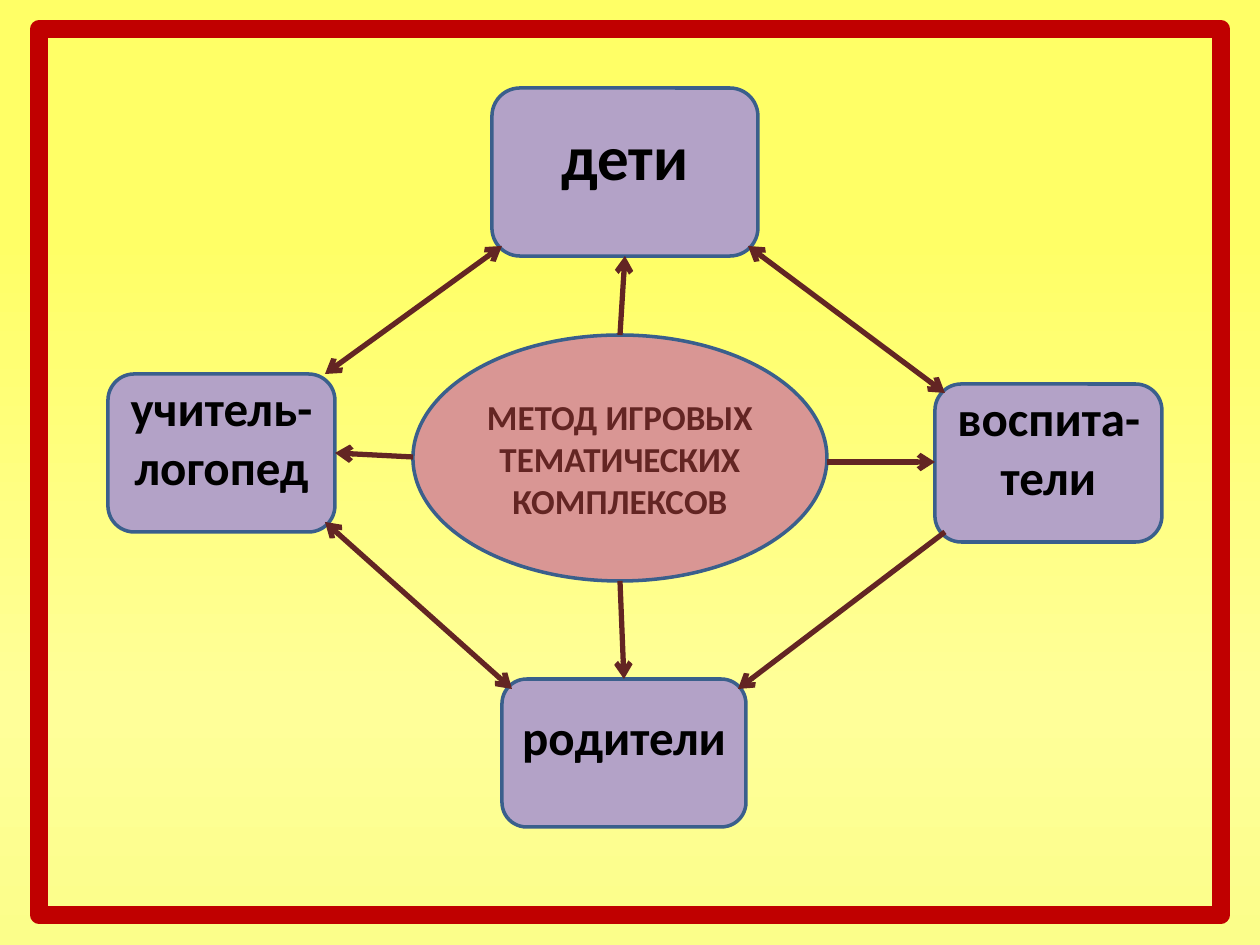
from lxml.etree import SubElement
from pptx import Presentation
from pptx.dml.color import RGBColor
from pptx.enum.shapes import MSO_CONNECTOR, MSO_SHAPE
from pptx.enum.text import MSO_ANCHOR, PP_ALIGN
from pptx.oxml.ns import qn
from pptx.util import Pt

PX = 914400 // 126
FONT = "Calibri"
COLORS = {
    "role": "B3A2C7", "method": "D99694", "outline": "3A5F8C",
    "arrow": "632523", "role_text": "000000", "frame": "C00000",
}
BACKGROUND = [(0, "FFFF66"), (25, "FFFF66"), (75, "FFFF99"), (100, "FBFE8A")]

# text, size, left, top, width, height
ROLES = [
    ("родители", 28, 502, 679, 244, 148),
    ("воспита-тели", 28, 935, 384, 227, 158),
    ("дети", 36, 492, 88, 266, 168),
    ("учитель-логопед", 28, 108, 374, 227, 158),
]
# start x, start y, end x, end y, arrowhead at both ends
ARROWS = [
    (620, 335, 625, 256, False),
    (620, 581, 624, 679, False),
    (413, 457, 335, 453, False),
    (827, 462, 935, 462, False),
    (325, 374, 502, 246, True),
    (748, 246, 945, 393, True),
    (945, 532, 738, 689, False),
    (325, 522, 512, 689, True),
]


def rgb(name):
    return RGBColor.from_string(COLORS[name])


def style_line(line, color, width):
    line.color.rgb = rgb(color)
    line.width = Pt(width)


def paint_background(slide):
    fill = slide.background.fill
    fill.gradient()
    fill.gradient_angle = 270
    stops = slide._element.find(".//" + qn("a:gsLst"))
    for stop in list(stops):
        stops.remove(stop)
    for percent, color in BACKGROUND:
        stop = SubElement(stops, qn("a:gs"), pos=str(percent * 1000))
        SubElement(stop, qn("a:srgbClr"), val=color)


def add_outline_shape(slide, kind, box, color, width):
    shape = slide.shapes.add_shape(kind, *(n * PX for n in box))
    shape.shadow.inherit = False
    style_line(shape.line, color, width)
    return shape


def add_node(slide, kind, box, fill, text, size, text_color, bottom_inset=6):
    node = add_outline_shape(slide, kind, box, "outline", 2)
    node.fill.solid()
    node.fill.fore_color.rgb = rgb(fill)
    frame = node.text_frame
    frame.word_wrap = True
    frame.vertical_anchor = MSO_ANCHOR.MIDDLE
    frame.margin_bottom = bottom_inset * PX
    paragraph = frame.paragraphs[0]
    paragraph.alignment = PP_ALIGN.CENTER
    run = paragraph.add_run()
    run.text = text
    run.font.name = FONT
    run.font.size = Pt(size)
    run.font.bold = True
    run.font.color.rgb = rgb(text_color)


def add_arrow(slide, x1, y1, x2, y2, both_ends):
    arrow = slide.shapes.add_connector(
        MSO_CONNECTOR.STRAIGHT, x1 * PX, y1 * PX, x2 * PX, y2 * PX)
    style_line(arrow.line, "arrow", 3)
    outline = arrow.line._get_or_add_ln()
    if both_ends:
        SubElement(outline, qn("a:headEnd"), type="arrow")
    SubElement(outline, qn("a:tailEnd"), type="arrow")
    SubElement(arrow.element.spPr, qn("a:effectLst"))


def add_frame(slide):
    frame = add_outline_shape(
        slide, MSO_SHAPE.RECTANGLE, (39, 29, 1182, 886), "frame", 10)
    frame.fill.background()
    SubElement(frame.line._get_or_add_ln(), qn("a:round"))


def main():
    prs = Presentation()
    prs.slide_width, prs.slide_height = 1260 * PX, 945 * PX
    slide = prs.slides.add_slide(prs.slide_layouts[6])
    paint_background(slide)

    # Central method and the people around it
    add_node(slide, MSO_SHAPE.OVAL, (413, 335, 414, 246), "method",
             "МЕТОД ИГРОВЫХ ТЕМАТИЧЕСКИХ КОМПЛЕКСОВ", 20, "arrow")
    for text, size, *box in ROLES:
        add_node(slide, MSO_SHAPE.ROUNDED_RECTANGLE, box, "role",
                 text, size, "role_text", bottom_inset=40)

    # Links between them
    for link in ARROWS:
        add_arrow(slide, *link)

    add_frame(slide)
    prs.save("out.pptx")


if __name__ == "__main__":
    main()
